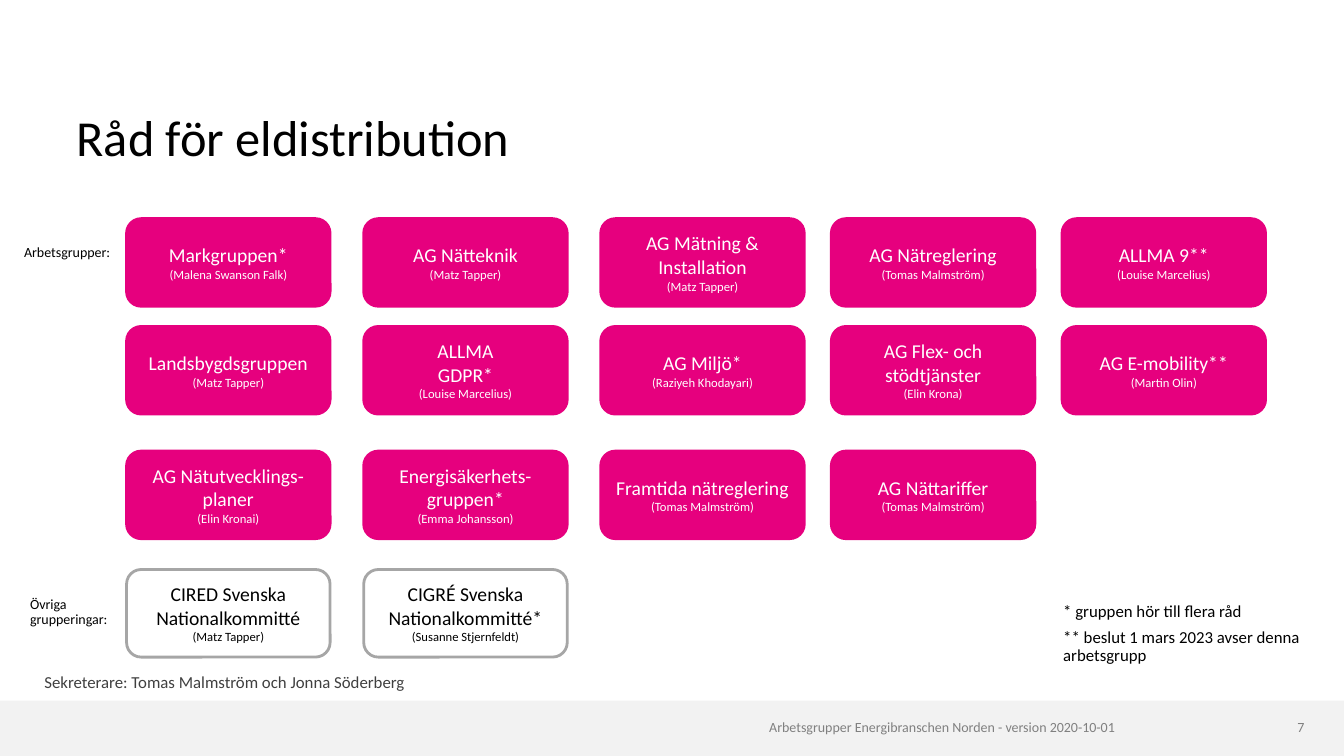
"""Build the slide showing the working groups of the electricity distribution council."""
from pptx import Presentation
from pptx.dml.color import RGBColor as RGB
from pptx.enum.shapes import MSO_SHAPE as SHAPE
from pptx.enum.text import MSO_ANCHOR as ANCHOR, PP_ALIGN as ALIGN
from pptx.util import Pt

GROUPS = [
    [("Markgruppen*", "(Malena Swanson Falk)"),
     ("AG Nätteknik", "(Matz Tapper)"),
     ("AG Mätning & Installation", "(Matz Tapper)"),
     ("AG Nätreglering", "(Tomas Malmström)"),
     ("ALLMA 9**", "(Louise Marcelius)")],
    [("Landsbygdsgruppen", "(Matz Tapper)"),
     ("ALLMA", "GDPR*", "(Louise Marcelius)"),
     ("AG Miljö*", "(Raziyeh Khodayari)"),
     ("AG Flex- och stödtjänster", "(Elin Krona)"),
     ("AG E-mobility**", "(Martin Olin)")],
    [("AG Nätutvecklings-planer", "(Elin Kronai)"),
     ("Energisäkerhets-gruppen*", "(Emma Johansson)"),
     ("Framtida nätreglering", "(Tomas Malmström)"),
     ("AG Nättariffer", "(Tomas Malmström)")],
]
COMMITTEES = [
    ("CIRED Svenska Nationalkommitté", "(Matz Tapper)"),
    ("CIGRÉ Svenska Nationalkommitté*", "(Susanne Stjernfeldt)"),
]
THEME = {
    "font": "Calibri",
    "black": "000000", "white": "FFFFFF", "pink": "E6007E", "outline": "A6A6A6",
    "band": "F2F2F2", "footer": "808080", "body": "404040",
    "title_size": 36, "name_size": 14, "note_size": 12, "label_size": 10, "person_size": 9,
}
INSET = {"margin_left": 7.2, "margin_right": 7.2, "margin_top": 3.6, "margin_bottom": 3.6}
FLUSH = dict.fromkeys(INSET, 0)
TEXTS = [
    (("Arbetsgrupper Energibranschen Norden - version 2020-10-01",), (158.4, 513.4, 637.9, 13.7),
     "label_size", "footer", FLUSH, ANCHOR.TOP, {"alignment": ALIGN.RIGHT}),
    (("7",), (903.6, 513.4, 28.1, 14.4),
     "label_size", "footer", FLUSH, ANCHOR.TOP, {"alignment": ALIGN.RIGHT}),
    (("Råd för eldistribution",), (54.7, 42.5, 683.3, 77),
     "title_size", "black", FLUSH, ANCHOR.BOTTOM, {"line_spacing": 0.85}),
    (("Sekreterare: Tomas Malmström och Jonna Söderberg",), (31.7, 479.5, 350, 16.6),
     "note_size", "body", FLUSH, ANCHOR.MIDDLE, {"line_spacing": 0.97}),
    (("Arbetsgrupper:",), (10.1, 171.4, 87.1, 18),
     "label_size", "black", INSET, ANCHOR.TOP, {"line_spacing": 0.9}),
    (("Övriga grupperingar:",), (14.4, 423.4, 87.1, 28.8),
     "label_size", "black", INSET, ANCHOR.TOP, {"line_spacing": 0.9}),
    (("* gruppen hör till flera råd", "** beslut 1 mars 2023 avser denna arbetsgrupp"),
     (752.4, 427, 185, 52.6),
     "note_size", "black", INSET, ANCHOR.TOP, {"line_spacing": 0.9}),
]
COLS = [90.4, 259.8, 429.1, 593.8, 758.6]
ROWS = [156.2, 233.2, 322.2]
COMMITTEE_ROW = 406.8
BOX_W, BOX_H = 145.4, 62.6


def set_attrs(obj, values):
    for name, value in values.items():
        setattr(obj, name, value)


def write(tf, lines, sizes, color, margins, anchor, para):
    set_attrs(tf, {name: Pt(m) for name, m in margins.items()})
    set_attrs(tf, {"word_wrap": True, "vertical_anchor": anchor})
    for i, (line, size) in enumerate(zip(lines, sizes)):
        p = tf.add_paragraph() if i else tf.paragraphs[0]
        set_attrs(p, para)
        if i and "line_spacing" in para:
            p.space_before = Pt(6)
        r = p.add_run()
        r.text = line
        set_attrs(r.font, {"name": THEME["font"], "size": Pt(THEME[size])})
        r.font.color.rgb = RGB.from_string(THEME[color])


def add_shape(s, kind, rect, fill, line):
    sp = s.shapes.add_shape(kind, *map(Pt, rect))
    sp.shadow.inherit = False
    for part, color in ((sp.fill, fill), (sp.line.fill, line)):
        if color:
            part.solid()
            part.fore_color.rgb = RGB.from_string(THEME[color])
        else:
            part.background()
    return sp


def add_group(s, x, y, lines, fill, line, color):
    sp = add_shape(s, SHAPE.ROUNDED_RECTANGLE, (x, y, BOX_W, BOX_H), fill, line)
    sp.line.width = Pt(2)
    sizes = ["name_size"] * (len(lines) - 1) + ["person_size"]
    write(sp.text_frame, lines, sizes, color, INSET, ANCHOR.MIDDLE, {"alignment": ALIGN.CENTER})


def main():
    prs = Presentation()
    set_attrs(prs, {"slide_width": Pt(960), "slide_height": Pt(540)})
    s = prs.slides.add_slide(prs.slide_layouts[6])
    add_shape(s, SHAPE.RECTANGLE, (0, 500.4, 960, 39.6), "band", None)
    for lines, rect, size, color, margins, anchor, para in TEXTS:
        tf = s.shapes.add_textbox(*map(Pt, rect)).text_frame
        write(tf, lines, [size] * len(lines), color, margins, anchor, para)
    for y, row in zip(ROWS, GROUPS):
        for x, lines in zip(COLS, row):
            add_group(s, x, y, lines, "pink", "pink", "white")
    for x, lines in zip(COLS, COMMITTEES):
        add_group(s, x, COMMITTEE_ROW, lines, None, "outline", "black")
    prs.save("out.pptx")


if __name__ == "__main__":
    main()
